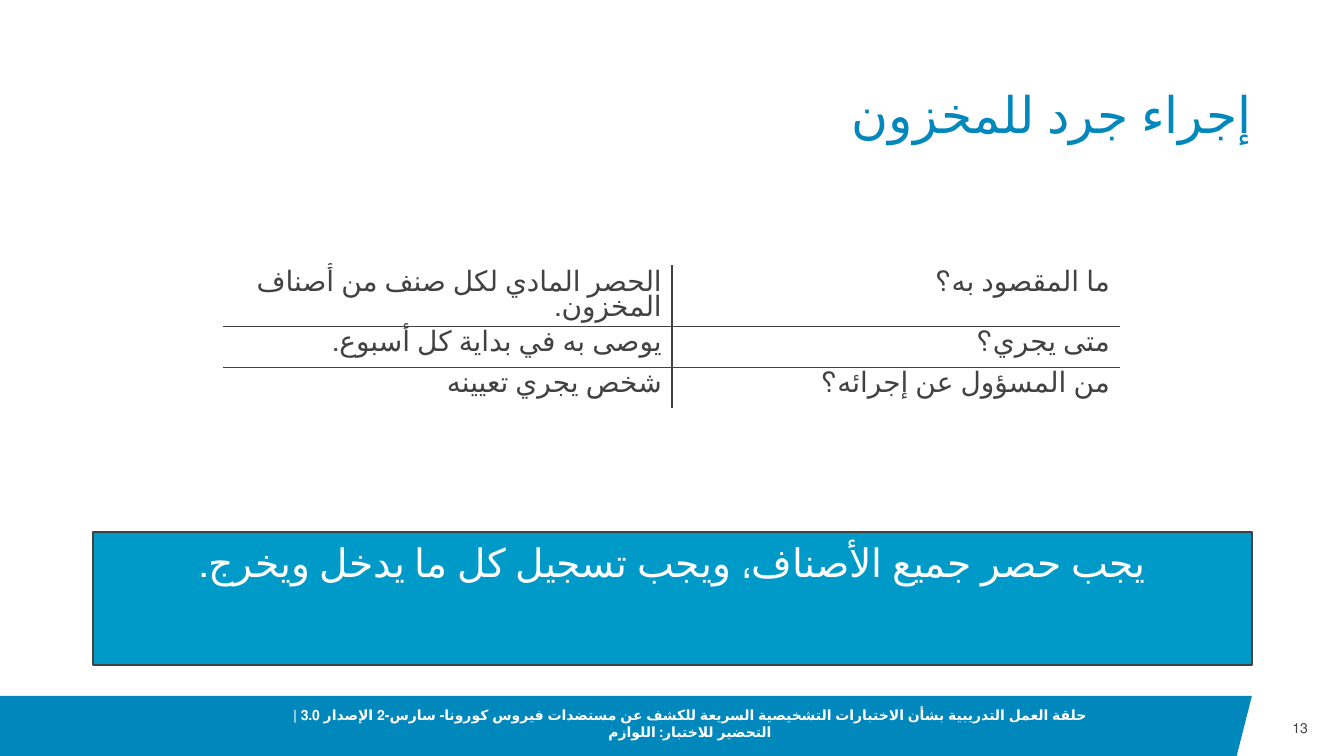
from dataclasses import dataclass

from lxml.etree import SubElement
from pptx import Presentation
from pptx.dml.color import RGBColor
from pptx.enum.shapes import MSO_SHAPE as Shape
from pptx.enum.text import MSO_ANCHOR as Anchor, MSO_AUTO_SIZE as AutoSize, PP_ALIGN as Align
from pptx.oxml.ns import qn
from pptx.util import Pt

PX = 914400 / 100.8


@dataclass(frozen=True)
class Theme:
    font: str = "Arial"
    language: str = "ar"
    title_blue: RGBColor = RGBColor(0x00, 0x87, 0xBC)
    callout_blue: RGBColor = RGBColor(0x00, 0x9A, 0xC9)
    dark: RGBColor = RGBColor(0x42, 0x42, 0x42)
    white: RGBColor = RGBColor(0xFF, 0xFF, 0xFF)
    title_size: int = 36
    callout_size: int = 28
    table_size: int = 20
    small_size: int = 10
    line_width: int = 1


THEME = Theme()

STOCK_COUNT = [
    ("الحصر المادي لكل صنف من أصناف المخزون.", "ما المقصود به؟"),
    ("يوصى به في بداية كل أسبوع.", "متى يجري؟"),
    ("شخص يجري تعيينه", "من المسؤول عن إجرائه؟"),
]


def px(*lengths):
    return [round(length * PX) for length in lengths]


def write(frame, text, size, color, align=Align.RIGHT, spacing=1.0, bold=False):
    """Fill the frame with one right-to-left paragraph."""
    para = frame.paragraphs[0]
    para.alignment = align
    para.line_spacing = spacing
    para._p.get_or_add_pPr().set("rtl", "1")
    span = para.add_run()
    span.text = text
    span.font.name = THEME.font
    span.font.size = Pt(size)
    span.font.bold = bold
    span.font.color.rgb = color
    span._r.get_or_add_rPr().set("lang", THEME.language)


def set_frame(frame, anchor, inset=0):
    frame.word_wrap = True
    frame.auto_size = AutoSize.NONE
    frame.vertical_anchor = anchor
    frame.margin_left, frame.margin_top, frame.margin_right, frame.margin_bottom = px(*[inset] * 4)


def add_footer_band(page):
    builder = page.shapes.build_freeform(0, 696, scale=PX)
    builder.add_line_segments([(1252, 696), (1236, 759), (0, 759)])
    band = builder.convert_to_shape()
    band.shadow.inherit = False
    band.fill.solid()
    band.fill.fore_color.rgb = THEME.title_blue
    band.line.fill.background()


def add_title(page, text):
    title = page.shapes.title
    title.left, title.top, title.width, title.height = px(93, 40, 1159, 104)
    set_frame(title.text_frame, Anchor.BOTTOM)
    write(title.text_frame, text, THEME.title_size, THEME.title_blue, spacing=0.9)


def add_label(page, place, text, color, align, bold=False):
    box = page.shapes.add_textbox(*px(*place))
    set_frame(box.text_frame, Anchor.MIDDLE)
    write(box.text_frame, text, THEME.small_size, color, align, bold=bold)


def set_borders(cell, sides):
    """Rule the given sides, listed in the order L, R, T, B."""
    properties = cell._tc.get_or_add_tcPr()
    for side in sides:
        line = SubElement(properties, qn(f"a:ln{side}"), w=str(Pt(THEME.line_width)))
        fill = SubElement(line, qn("a:solidFill"))
        SubElement(fill, qn("a:srgbClr"), val=str(THEME.dark))


def add_stock_table(page, rows):
    row_height = 41
    last = len(rows) - 1
    frame = page.shapes.add_table(len(rows), 2, *px(224, 266, 896, row_height * len(rows)))
    table = frame.table
    table.first_row = table.horz_banding = False
    for row_index, texts in enumerate(rows):
        for column_index, text in enumerate(texts):
            cell = table.cell(row_index, column_index)
            sides = "RL"[column_index]
            sides += "T" if row_index > 0 else ""
            sides += "B" if row_index < last else ""
            set_borders(cell, sides)
            cell.fill.background()
            write(cell.text_frame, text, THEME.table_size, THEME.dark, spacing=0.9)


def add_callout(page, text):
    box = page.shapes.add_shape(Shape.RECTANGLE, *px(93, 532, 1159, 133))
    box.shadow.inherit = False
    box.fill.solid()
    box.fill.fore_color.rgb = THEME.callout_blue
    box.line.color.rgb = THEME.dark
    box.line.width = Pt(THEME.line_width)
    set_frame(box.text_frame, Anchor.TOP, inset=6)
    write(box.text_frame, text, THEME.callout_size, THEME.white, Align.CENTER)


def main():
    deck = Presentation()
    deck.slide_width, deck.slide_height = px(1344, 756)
    page = deck.slides.add_slide(deck.slide_layouts[5])
    add_footer_band(page)
    add_title(page, "إجراء جرد للمخزون")
    add_label(page, (1252, 696, 56, 63), "13", THEME.dark, Align.RIGHT)
    add_stock_table(page, STOCK_COUNT)
    add_callout(page, "يجب حصر جميع الأصناف، ويجب تسجيل كل ما يدخل ويخرج.")
    add_label(
        page,
        (287, 696, 806, 55),
        "حلقة العمل التدريبية بشأن الاختبارات التشخيصية السريعة للكشف عن مستضدات "
        "فيروس كورونا- سارس-2 الإصدار 3.0 | التحضير للاختبار: اللوازم",
        THEME.white,
        Align.CENTER,
        bold=True,
    )
    deck.save("out.pptx")


if __name__ == "__main__":
    main()
